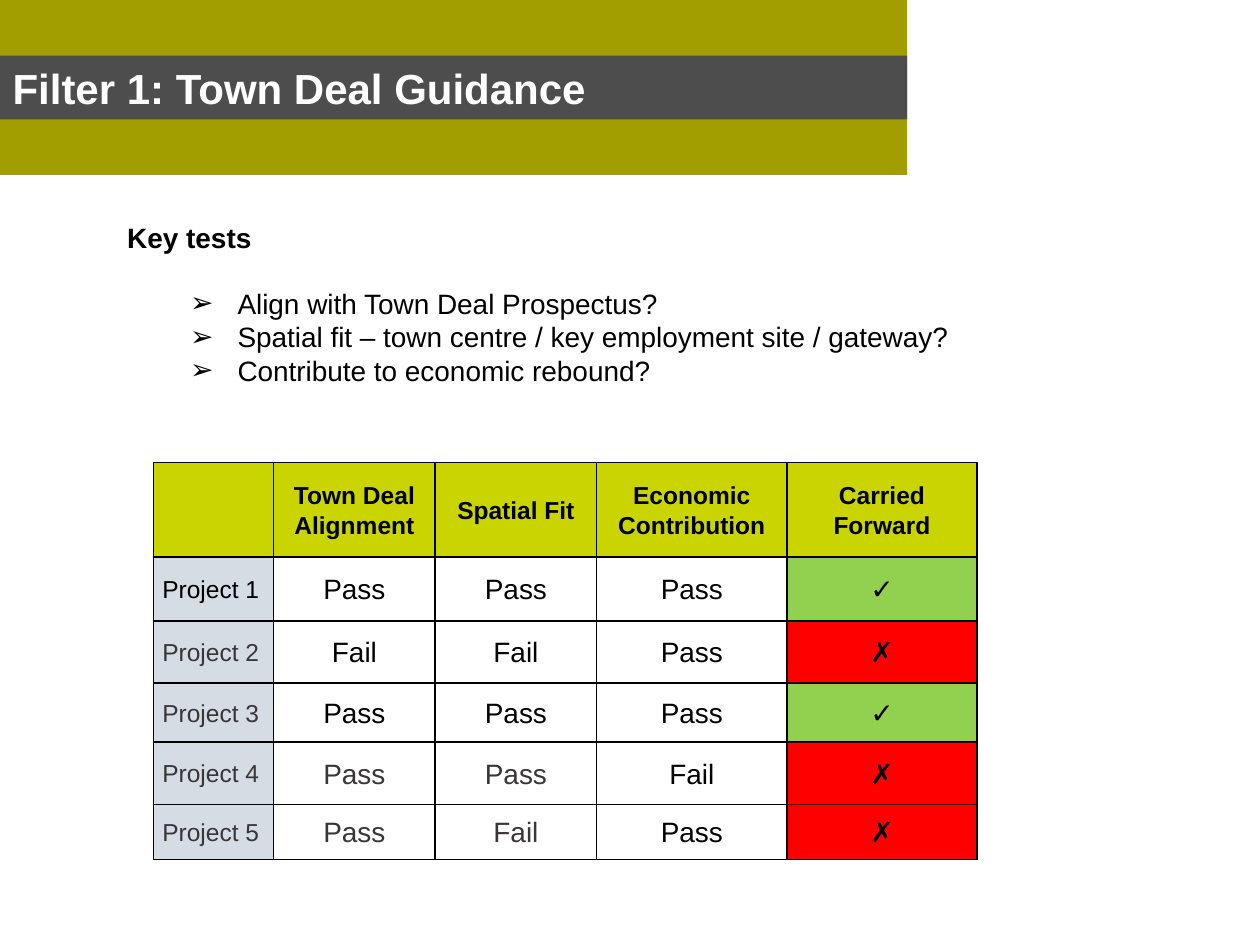
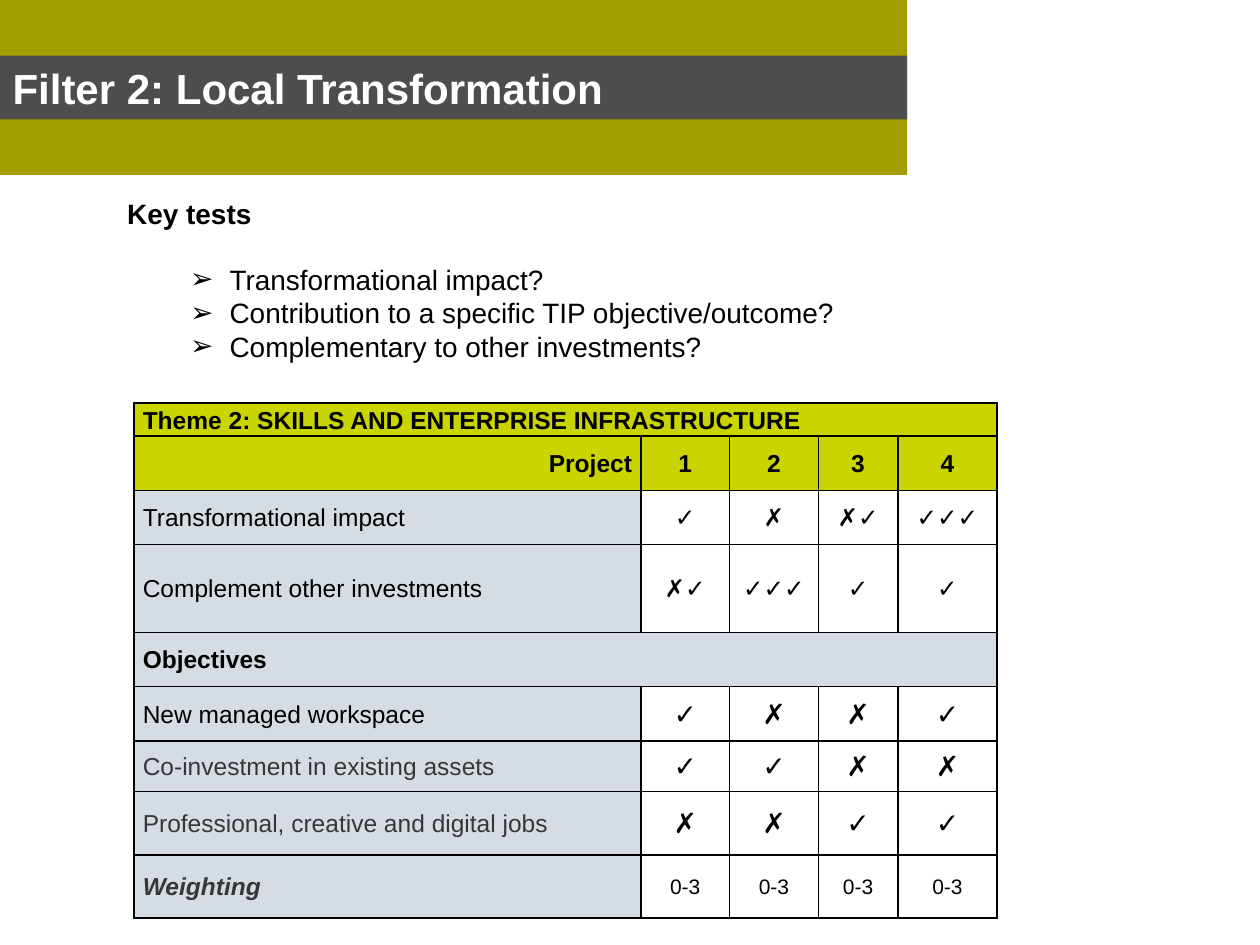
from dataclasses import dataclass

import pptx
import pptx.dml.color
import pptx.enum.shapes
import pptx.enum.text
import pptx.oxml
import pptx.oxml.ns
import pptx.util

Pt = pptx.util.Pt
ALIGN = pptx.enum.text.PP_ALIGN
MIDDLE = pptx.enum.text.MSO_ANCHOR.MIDDLE

FONT = "Arial"
COLOURS = {
    "olive": "A29E00",
    "charcoal": "4D4D4D",
    "white": "FFFFFF",
    "black": "000000",
    "muted": "383637",
    "lime": "CAD400",
    "label": "D5DCE4",
    "pass": "92D050",
    "fail": "FF0000",
}
VERDICT_FILLS = {"✓": "pass", "✗": "fail"}
BAND_WIDTH = 518.4
BULLET_LEFT = 36
LABEL_SIZE = 14
BODY_SIZE = 16


@dataclass(frozen=True)
class Row:
    height: float
    texts: tuple[str, ...]
    value_size: float = BODY_SIZE
    header: bool = False
    muted_columns: tuple[int, ...] = ()
    italic_label: bool = False


@dataclass(frozen=True)
class Grid:
    left: float
    top: float
    widths: tuple[float, ...]
    rows: tuple[Row, ...]
    shows_verdict: bool = False


@dataclass(frozen=True)
class FilterSlide:
    title: str
    tests: tuple[str, ...]
    tests_top: float
    tests_width: float
    tests_indent: float
    grid: Grid


FILTER_SLIDES = (
    FilterSlide(
        "Filter 1: Town Deal Guidance",
        (
            "Align with Town Deal Prospectus?",
            "Spatial fit – town centre / key employment site / gateway?",
            "Contribute to economic rebound?",
        ),
        tests_top=122.4,
        tests_width=550,
        tests_indent=63,
        grid=Grid(
            87.8,
            264.4,
            (68.6, 92.3, 92.3, 108.7, 108.7),
            (
                Row(54, ("", "Town Deal Alignment", "Spatial Fit",
                         "Economic Contribution", "Carried Forward"), LABEL_SIZE, header=True),
                Row(36.5, ("Project 1", "Pass", "Pass", "Pass", "✓")),
                Row(35.5, ("Project 2", "Fail", "Fail", "Pass", "✗"), muted_columns=(0,)),
                Row(33.7, ("Project 3", "Pass", "Pass", "Pass", "✓"), muted_columns=(0,)),
                Row(35.7, ("Project 4", "Pass", "Pass", "Fail", "✗"), muted_columns=(0, 1, 2)),
                Row(31.5, ("Project 5", "Pass", "Fail", "Pass", "✗"), muted_columns=(0, 1, 2)),
            ),
            shows_verdict=True,
        ),
    ),
    FilterSlide(
        "Filter 2: Local Transformation",
        (
            "Transformational impact?",
            "Contribution to a specific TIP objective/outcome?",
            "Complementary to other investments?",
        ),
        tests_top=108.6,
        tests_width=420,
        tests_indent=58.5,
        grid=Grid(
            76.6,
            230.4,
            (289.6, 50.8, 50.6, 45.5, 56.7),
            (
                Row(18.8, ("Theme 2: SKILLS AND ENTERPRISE INFRASTRUCTURE",), header=True),
                Row(31, ("Project", "1", "2", "3", "4"), LABEL_SIZE, header=True),
                Row(31, ("Transformational impact", "✓", "✗", "✗✓", "✓✓✓"), LABEL_SIZE),
                Row(50.2, ("Complement other investments", "✗✓", "✓✓✓", "✓", "✓"), LABEL_SIZE),
                Row(31, ("Objectives",)),
                Row(31, ("New managed workspace", "✓", "✗", "✗", "✓")),
                Row(29, ("Co-investment in existing assets", "✓", "✓", "✗", "✗"),
                    muted_columns=(0,)),
                Row(36.2, ("Professional, creative and digital jobs", "✗", "✗", "✓", "✓"),
                    muted_columns=(0,)),
                Row(36.2, ("Weighting", "0-3", "0-3", "0-3", "0-3"), 12,
                    muted_columns=(0,), italic_label=True),
            ),
        ),
    ),
)


def rgb(name: str) -> pptx.dml.color.RGBColor:
    return pptx.dml.color.RGBColor.from_string(COLOURS[name])


def fill_with(target, colour: str) -> None:
    target.fill.solid()
    target.fill.fore_color.rgb = rgb(colour)


def place(shape, left: float, top: float, width: float, height: float) -> None:
    shape.left, shape.top = Pt(left), Pt(top)
    shape.width, shape.height = Pt(width), Pt(height)


def format_runs(paragraph, size: float, colour: str = "black",
                bold: bool = False, italic: bool = False) -> None:
    for run in paragraph.runs:
        run.font.name = FONT
        run.font.size = Pt(size)
        run.font.bold = bold
        run.font.italic = italic
        run.font.color.rgb = rgb(colour)


def add_xml(parent, content: str) -> None:
    namespace = pptx.oxml.ns.nsdecls("a")
    wrapper = pptx.oxml.parse_xml(f"<a:wrapper {namespace}>{content}</a:wrapper>")
    parent.extend(list(wrapper))


def add_title(slide, text: str) -> None:
    band = slide.shapes.add_shape(
        pptx.enum.shapes.MSO_SHAPE.RECTANGLE, 0, 0, Pt(BAND_WIDTH), Pt(100))
    band.shadow.inherit = False
    fill_with(band, "olive")
    band.line.fill.background()

    title = slide.shapes.title
    title.element.addprevious(band.element)
    place(title, 0, 31.8, BAND_WIDTH, 36.4)
    fill_with(title, "charcoal")
    frame = title.text_frame
    frame.text = text
    frame.vertical_anchor = MIDDLE
    frame.auto_size = pptx.enum.text.MSO_AUTO_SIZE.NONE
    frame.paragraphs[0].alignment = ALIGN.LEFT
    format_runs(frame.paragraphs[0], 24, "white", bold=True)


def add_key_tests(slide, content: FilterSlide) -> None:
    body = slide.placeholders[1]
    place(body, 65.5, content.tests_top, content.tests_width, 104.4)
    frame = body.text_frame
    frame.text = "\n".join(("Key tests", *content.tests))
    frame.auto_size = pptx.enum.text.MSO_AUTO_SIZE.NONE
    for index, paragraph in enumerate(frame.paragraphs):
        is_heading = index == 0
        indent = 0 if is_heading else content.tests_indent
        hanging = 0 if is_heading else BULLET_LEFT - indent
        properties = paragraph._p.get_or_add_pPr()
        properties.set("marL", str(Pt(indent)))
        properties.set("indent", str(Pt(hanging)))
        add_xml(properties, "<a:buNone/>" if is_heading else
                f'<a:buFont typeface="{FONT}"/><a:buChar char="➢"/>')
        paragraph.space_before = Pt(18.4 if index == 1 else 0)
        format_runs(paragraph, BODY_SIZE, bold=is_heading)


def add_borders(cell) -> None:
    properties = cell._tc.get_or_add_tcPr()
    for side in "LRTB":
        add_xml(properties, f'<a:ln{side} w="{Pt(1)}"><a:solidFill>'
                f'<a:srgbClr val="{COLOURS["black"]}"/></a:solidFill></a:ln{side}>')


def cell_fill(row: Row, column: int, text: str, grid: Grid) -> str | None:
    if row.header:
        return "lime"
    if column == 0 or len(row.texts) == 1:
        return "label"
    if grid.shows_verdict and column == len(grid.widths) - 1:
        return VERDICT_FILLS[text]
    return None


def format_cell(cell, row: Row, column: int, text: str, grid: Grid) -> None:
    spans_row = len(row.texts) == 1
    is_label = column == 0
    cell.margin_left = cell.margin_right = Pt(5)
    cell.margin_top = cell.margin_bottom = 0
    cell.vertical_anchor = MIDDLE
    add_borders(cell)
    fill = cell_fill(row, column, text, grid)
    if fill:
        fill_with(cell, fill)
    else:
        cell.fill.background()
    if not text:
        return
    cell.text_frame.text = text
    paragraph = cell.text_frame.paragraphs[0]
    paragraph.line_spacing = 1.07
    if not is_label:
        paragraph.alignment = ALIGN.CENTER
    elif row.header and not spans_row:
        paragraph.alignment = ALIGN.RIGHT
    else:
        paragraph.alignment = ALIGN.LEFT
    italic = is_label and row.italic_label
    format_runs(
        paragraph,
        LABEL_SIZE if is_label else row.value_size,
        "muted" if column in row.muted_columns else "black",
        bold=row.header or spans_row or italic,
        italic=italic,
    )


def add_grid(slide, grid: Grid) -> None:
    column_count = len(grid.widths)
    table = slide.shapes.add_table(
        len(grid.rows), column_count, Pt(grid.left), Pt(grid.top),
        Pt(sum(grid.widths)), Pt(sum(row.height for row in grid.rows))).table
    table.first_row = False
    table.horz_banding = False
    for column, width in enumerate(grid.widths):
        table.columns[column].width = Pt(width)
    for row_index, row in enumerate(grid.rows):
        table.rows[row_index].height = Pt(row.height)
        for column in range(column_count):
            text = row.texts[column] if column < len(row.texts) else ""
            format_cell(table.cell(row_index, column), row, column, text, grid)
        if len(row.texts) == 1:
            table.cell(row_index, 0).merge(table.cell(row_index, column_count - 1))


def main() -> None:
    presentation = pptx.Presentation()
    presentation.slide_width = Pt(720)
    presentation.slide_height = Pt(540)
    for content in FILTER_SLIDES:
        slide = presentation.slides.add_slide(presentation.slide_layouts[1])
        add_title(slide, content.title)
        add_key_tests(slide, content)
        add_grid(slide, content.grid)
    presentation.save("out.pptx")


if __name__ == "__main__":
    main()
